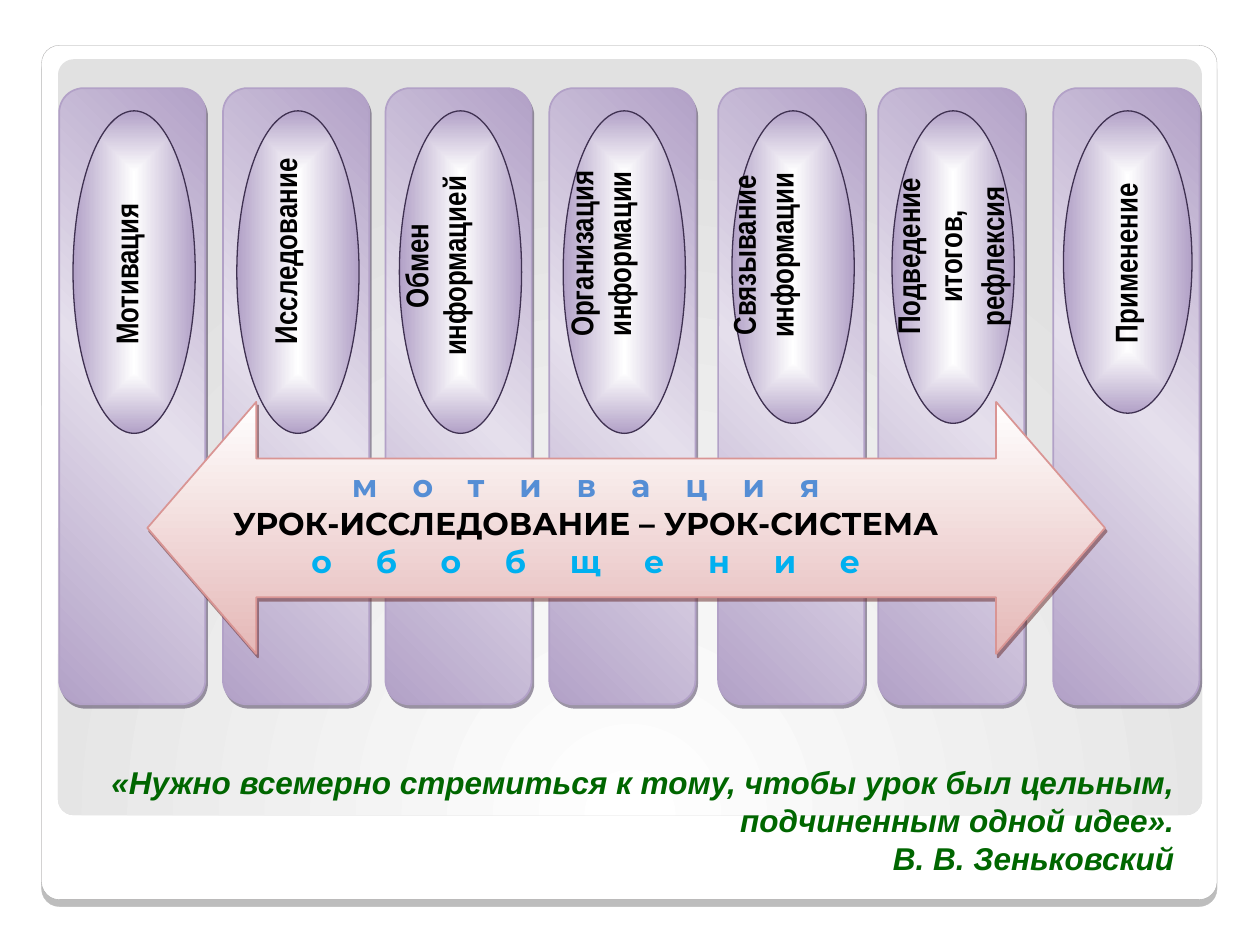
from dataclasses import dataclass

from pptx import Presentation
from pptx.dml.color import RGBColor
from pptx.enum.shapes import MSO_SHAPE
from pptx.enum.text import MSO_ANCHOR, MSO_AUTO_SIZE, PP_ALIGN
from pptx.oxml import parse_xml
from pptx.oxml.ns import qn
from pptx.util import Inches, Pt

ROUNDED, OVAL = MSO_SHAPE.ROUNDED_RECTANGLE, MSO_SHAPE.OVAL
DOUBLE_ARROW = MSO_SHAPE.LEFT_RIGHT_ARROW
CENTER, RIGHT = PP_ALIGN.CENTER, PP_ALIGN.RIGHT
BOTTOM, NO_AUTOFIT = MSO_ANCHOR.BOTTOM, MSO_AUTO_SIZE.NONE
A_NS = 'xmlns:a="http://schemas.openxmlformats.org/drawingml/2006/main"'

LILAC, PALE_LILAC, PLUM = "B2A1C7", "E5DFEC", "3F3151"
WHITE, BLACK = "FFFFFF", "000000"
CENTERED_PATH = ('<a:path path="shape"><a:fillToRect l="50000" t="50000" '
                 'r="50000" b="50000"/></a:path>')
GLOW_PATH = ('<a:path path="circle"><a:fillToRect l="50000" t="175000" '
             'r="50000" b="-75000"/></a:path>')


@dataclass
class Box:
    left: float
    top: float
    width: float
    height: float

    def emu(self) -> tuple:
        return tuple(Inches(v) for v in
                     (self.left, self.top, self.width, self.height))


@dataclass
class Stage:
    left: float
    oval_height: float
    label: Box
    lines: tuple
    oval_inset: float = 0.11
    oval_width: float = 0.97
    line_pitch: float | None = None


@dataclass
class Shadow:
    color: str
    alpha: int
    distance: float
    angle: int


STAGES = [
    Stage(0.47, 2.56, Box(0.8, 0.99, 0.76, 2.37), ("Мотивация",)),
    Stage(1.77, 2.56, Box(2.06, 0.63, 0.83, 2.73), ("Исследование",)),
    Stage(3.06, 2.56, Box(3.1, 1.02, 1.12, 2.18), ("Обмен", "информацией")),
    Stage(4.36, 2.56, Box(4.41, 0.99, 1.06, 2.05),
          ("Организация", "информации")),
    Stage(5.7, 2.48, Box(5.7, 1.02, 1.07, 2.01),
          ("Связывание", "информации")),
    Stage(6.97, 2.48, Box(6.97, 1.1, 1.07, 1.87),
          ("Подведение итогов, рефлексия",), line_pitch=24),
    Stage(8.36, 2.4, Box(8.73, 0.99, 0.64, 2.2), ("Применение",),
          oval_inset=0.08, oval_width=1.02),
]


def rgb(color: str) -> RGBColor:
    return RGBColor.from_string(color)


def linear(angle: int) -> str:
    return f'<a:lin ang="{angle * 60000}" scaled="0"/>'


def set_gradient(shape, stops: list, direction: str) -> None:
    shape.fill.gradient()
    properties = shape._element.spPr
    stop_xml = "".join(f'<a:gs pos="{pos * 1000}"><a:srgbClr val="{color}"/></a:gs>'
                       for pos, color in stops)
    properties.replace(
        properties.find(qn("a:gradFill")),
        parse_xml(f'<a:gradFill {A_NS} rotWithShape="1"><a:gsLst>{stop_xml}'
                  f'</a:gsLst>{direction}</a:gradFill>'))


def add_figure(slide, kind, box: Box, line: tuple | None = None,
               adjustments: tuple = (), shadow: Shadow | None = None):
    figure = slide.shapes.add_shape(kind, *box.emu())
    for index, value in enumerate(adjustments):
        figure.adjustments[index] = value
    if line:
        figure.line.color.rgb = rgb(line[0])
        figure.line.width = Pt(line[1])
    else:
        figure.line.fill.background()
    figure.shadow.inherit = False
    if shadow:
        effects = figure._element.spPr.find(qn("a:effectLst"))
        effects.append(parse_xml(
            f'<a:outerShdw {A_NS} blurRad="0" dist="{Pt(shadow.distance)}" '
            f'dir="{shadow.angle * 60000}" algn="ctr" rotWithShape="0">'
            f'<a:srgbClr val="{shadow.color}"><a:alpha val="{shadow.alpha * 1000}"/>'
            f'</a:srgbClr></a:outerShdw>'))
    return figure


def format_text(paragraph, font_name: str, color: str, align,
                italic: bool | None = None) -> None:
    paragraph.alignment = align
    font = paragraph.font
    font.name, font.size, font.bold, font.italic = font_name, Pt(18), True, italic
    font.color.rgb = rgb(color)


def add_text(slide, box: Box, lines: list, font_name: str):
    """Add centred lines, each a (text, color, letter spacing) tuple."""
    frame = slide.shapes.add_textbox(*box.emu()).text_frame
    frame.word_wrap = True
    for index, (text, color, spacing) in enumerate(lines):
        paragraph = frame.add_paragraph() if index else frame.paragraphs[0]
        run = paragraph.add_run()
        run.text = text
        format_text(paragraph, font_name, color, CENTER)
        if spacing:
            run._r.get_or_add_rPr().set("spc", str(spacing * 100))
    return frame


def add_column(slide, stage: Stage) -> None:
    column = add_figure(slide, ROUNDED, Box(stage.left, 0.7, 1.16, 4.89),
                        (LILAC, 1), (0.167,), Shadow(PLUM, 50, 2.2, 63))
    set_gradient(column, [(0, LILAC), (50, PALE_LILAC), (100, LILAC)], linear(315))
    oval = add_figure(slide, OVAL, Box(stage.left + stage.oval_inset, 0.88,
                                       stage.oval_width, stage.oval_height),
                      (PLUM, 0.75))
    set_gradient(oval, [(0, WHITE), (100, LILAC)], CENTERED_PATH)


def add_stage_label(slide, stage: Stage) -> None:
    label = add_text(slide, stage.label,
                     [(line, BLACK, 0) for line in stage.lines], "Arial Narrow")
    label._txBody.bodyPr.set("vert", "vert270")
    if stage.line_pitch:
        label.paragraphs[0].line_spacing = Pt(stage.line_pitch)


def main() -> None:
    presentation = Presentation()
    presentation.slide_width, presentation.slide_height = Inches(10), Inches(7.5)
    slide = presentation.slides.add_slide(presentation.slide_layouts[5])

    # Framed backdrop
    frame = add_figure(slide, ROUNDED, Box(0.33, 0.36, 9.33, 6.78),
                       ("A4A3A3", 0.16), (0.021,), Shadow(BLACK, 25, 4, 90))
    frame.fill.solid()
    frame.fill.fore_color.rgb = rgb(WHITE)
    panel = add_figure(slide, ROUNDED, Box(0.46, 0.47, 9.08, 6), None, (0.021,))
    set_gradient(panel, [(0, WHITE), (100, "E1E1E1")], GLOW_PATH)

    # Quotation as the title, brought in front of the backdrop
    quote = slide.shapes.title
    slide.shapes._spTree.append(quote._element)
    quote.left, quote.top, quote.width, quote.height = Box(0.47, 6.09, 8.95, 1.09).emu()
    text = quote.text_frame
    text.text = ("«Нужно всемерно стремиться к тому, чтобы урок был цельным, "
                 "подчиненным одной идее».\vВ. В. Зеньковский")
    text.word_wrap, text.auto_size, text.vertical_anchor = True, NO_AUTOFIT, BOTTOM
    text.margin_bottom = Inches(0.22)
    text.paragraphs[0].line_spacing = Pt(21.7)
    format_text(text.paragraphs[0], "Arial", "006600", RIGHT, italic=True)

    # Lesson stages
    for stage in STAGES:
        add_column(slide, stage)
    for stage in STAGES:
        add_stage_label(slide, stage)

    # Arrow across the stages
    arrow = add_figure(slide, DOUBLE_ARROW, Box(1.17, 3.19, 7.6, 2),
                       ("D99594", 1), (0.551, 0.432), Shadow("622423", 50, 2.2, 63))
    set_gradient(arrow, [(0, WHITE), (100, "E5B8B7")], linear(90))
    add_text(slide, Box(1.56, 3.65, 6.18, 1.19),
             [("мотивация", "558ED5", 20),
              ("УРОК-ИССЛЕДОВАНИЕ – УРОК-СИСТЕМА", BLACK, 0),
              ("обобщение", "00B0F0", 25)], "Montserrat")

    presentation.save("out.pptx")


if __name__ == "__main__":
    main()
